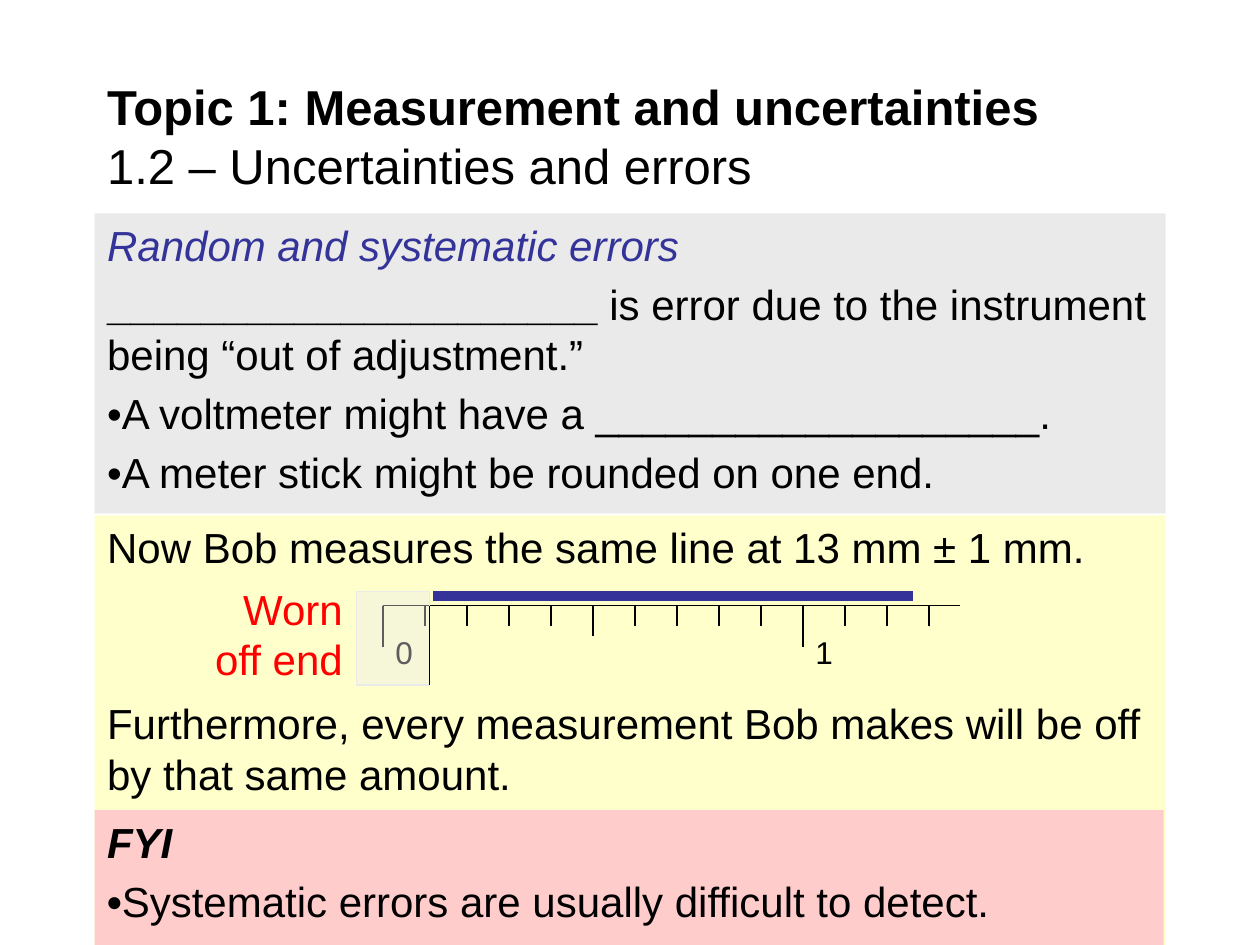
from lxml.etree import SubElement
from pptx import Presentation
from pptx.dml.color import RGBColor
from pptx.enum.shapes import MSO_CONNECTOR, MSO_SHAPE
from pptx.enum.text import MSO_ANCHOR, PP_ALIGN
from pptx.oxml.ns import qn
from pptx.util import Cm, Pt

THEME = {
    "font": "Arial", "title": 28, "body": 24, "number": 18, "thin": 0.75, "thick": 6,
    "black": "000000", "blue": "333399", "red": "FF0000",
    "grey": "EAEAEA", "yellow": "FFFFCC", "pink": "FFCCCC",
}
BODY_GAP = 4.8      # points before each body paragraph
RULER_GAP = 72      # points left free for the ruler

# Content: a paragraph is a list of (text, format) runs plus paragraph options
TITLE = [
    ([("Topic 1: Measurement and uncertainties", {"bold": True})], {}),
    ([("1.2 – Uncertainties and errors", {})], {}),
]
ERRORS = [
    ([("Random and systematic errors", {"italic": True, "color": "blue"})], {}),
    ([("_____________________ ", {"bold": True}),
      ("is error due to the instrument being “out of adjustment.”", {})], {}),
    ([("•A voltmeter might have a ___________________.", {})], {}),
    ([("•A meter stick might be rounded on one end.", {})], {}),
]
EXAMPLE = [
    ([("Now Bob measures the same line at 13 mm ± 1 mm.", {})], {}),
    ([("Furthermore, every measurement Bob makes will be off by that same amount.", {})],
     {"gap": RULER_GAP}),
]
FYI = [
    ([("FYI", {"bold": True, "italic": True})], {}),
    ([("•", {"bold": True}),
      ("Systematic errors are usually difficult to detect.", {})], {}),
]
WORN_LABEL = [([("Worn off end", {"color": "red"})], {"alignment": PP_ALIGN.RIGHT})]

# Places in centimetres: left, top, width, height
TITLE_BOX = (1.91, 1.48, 21.59, 2.5)
ERRORS_BOX = (1.91, 4.3, 21.59, 6.05)
EXAMPLE_BOX = (1.91, 10.39, 21.59, 8.66)
FYI_BOX = (1.91, 16.33, 21.55, 2.72)
WORN_BOX = (7.19, 11.93, 1.47, 1.88)
WORN_LABEL_BOX = (3.93, 11.63, 3.23, 2.29)
MEASURED_LINE = (8.73, 12.01, 18.41, 12.01)

# Ruler: a row of square cells, trimmed to ticks by strips in the panel colour
RULER = {"left": 7.72, "top": 12.21, "right": 19.36, "unit": 8.47, "cells": 13}
CELL = RULER["unit"] / 10
# Strips: left and right in cells, top and height in cell heights
TRIMS = [
    (0, 13, -0.25, 0.25), (0, 13, 1, 0.25),
    (0.5, 4.5, 0.5, 0.5), (5.5, 9.5, 0.5, 0.5), (10.75, 13, 0.5, 0.5),
    (4.5, 5.5, 0.75, 0.5),
]


def color(name):
    return RGBColor.from_string(THEME[name])


def set_format(target, values):
    for attribute, value in values.items():
        setattr(target, attribute, value)


def write(frame, paragraphs, size, gap=0):
    for index, (runs, options) in enumerate(paragraphs):
        paragraph = frame.paragraphs[0] if index == 0 else frame.add_paragraph()
        set_format(paragraph, {
            "alignment": options.get("alignment", PP_ALIGN.LEFT),
            "space_before": Pt(options.get("gap", gap)),
        })
        for text, values in runs:
            run = paragraph.add_run()
            run.text = text
            fonts = {"name": THEME["font"], "size": Pt(size), "bold": False, "italic": False}
            fonts.update(values)
            run.font.color.rgb = color(fonts.pop("color", "black"))
            set_format(run.font, fonts)


def add_text(slide, box, paragraphs, size, anchor=MSO_ANCHOR.TOP, wrap=True):
    frame = slide.shapes.add_textbox(*map(Cm, box)).text_frame
    set_format(frame, {"word_wrap": wrap, "vertical_anchor": anchor})
    write(frame, paragraphs, size)


def add_box(slide, box, fill=None, outline=None):
    shape = slide.shapes.add_shape(MSO_SHAPE.RECTANGLE, *map(Cm, box))
    shape.shadow.inherit = False
    if fill:
        shape.fill.solid()
        shape.fill.fore_color.rgb = color(fill)
    else:
        shape.fill.background()
    if outline:
        shape.line.color.rgb = color(outline)
        shape.line.width = Pt(THEME["thin"])
    else:
        shape.line.fill.background()
    return shape


def add_panel(slide, box, fill, paragraphs):
    frame = add_box(slide, box, fill).text_frame
    set_format(frame, {"word_wrap": True, "vertical_anchor": MSO_ANCHOR.TOP})
    write(frame, paragraphs, THEME["body"], BODY_GAP)


def add_line(slide, ends, name="black", width=THEME["thin"]):
    line = slide.shapes.add_connector(MSO_CONNECTOR.STRAIGHT, *map(Cm, ends))
    line.line.color.rgb = color(name)
    line.line.width = Pt(width)
    SubElement(line._element.spPr, qn("a:effectLst"))


def add_ruler(slide):
    left, top = RULER["left"], RULER["top"]
    for cell in range(RULER["cells"]):
        add_box(slide, (left + cell * CELL, top, CELL, CELL), outline="black")
    for start, end, drop, height in TRIMS:
        strip = (left + start * CELL, top + drop * CELL, (end - start) * CELL, height * CELL)
        add_box(slide, strip, "yellow", "yellow")
    add_line(slide, (left, top, RULER["right"], top))
    for number in range(2):
        add_text(slide, (left + number * RULER["unit"], top + CELL / 2, 0.86, 1.02),
                 [([(str(number), {})], {})], THEME["number"], wrap=False)


def add_worn_end(slide):
    cover = add_box(slide, WORN_BOX, "grey", "grey")
    fill_color = cover._element.spPr.find(qn("a:solidFill"))[0]
    SubElement(fill_color, qn("a:alpha")).set("val", "40000")
    add_text(slide, WORN_LABEL_BOX, WORN_LABEL, THEME["body"])
    left, top, width, height = WORN_BOX
    add_line(slide, (left + width, RULER["top"], left + width, top + height))


def main():
    deck = Presentation()
    set_format(deck, {"slide_width": Cm(25.4), "slide_height": Cm(19.05)})
    slide = deck.slides.add_slide(deck.slide_layouts[6])

    # Definition and heading
    add_panel(slide, ERRORS_BOX, "grey", ERRORS)
    add_text(slide, TITLE_BOX, TITLE, THEME["title"], MSO_ANCHOR.MIDDLE)

    # Example with the worn ruler and the measured line
    add_panel(slide, EXAMPLE_BOX, "yellow", EXAMPLE)
    add_ruler(slide)
    add_worn_end(slide)
    add_line(slide, MEASURED_LINE, "blue", THEME["thick"])

    # Closing remark
    add_panel(slide, FYI_BOX, "pink", FYI)
    deck.save("out.pptx")


if __name__ == "__main__":
    main()
